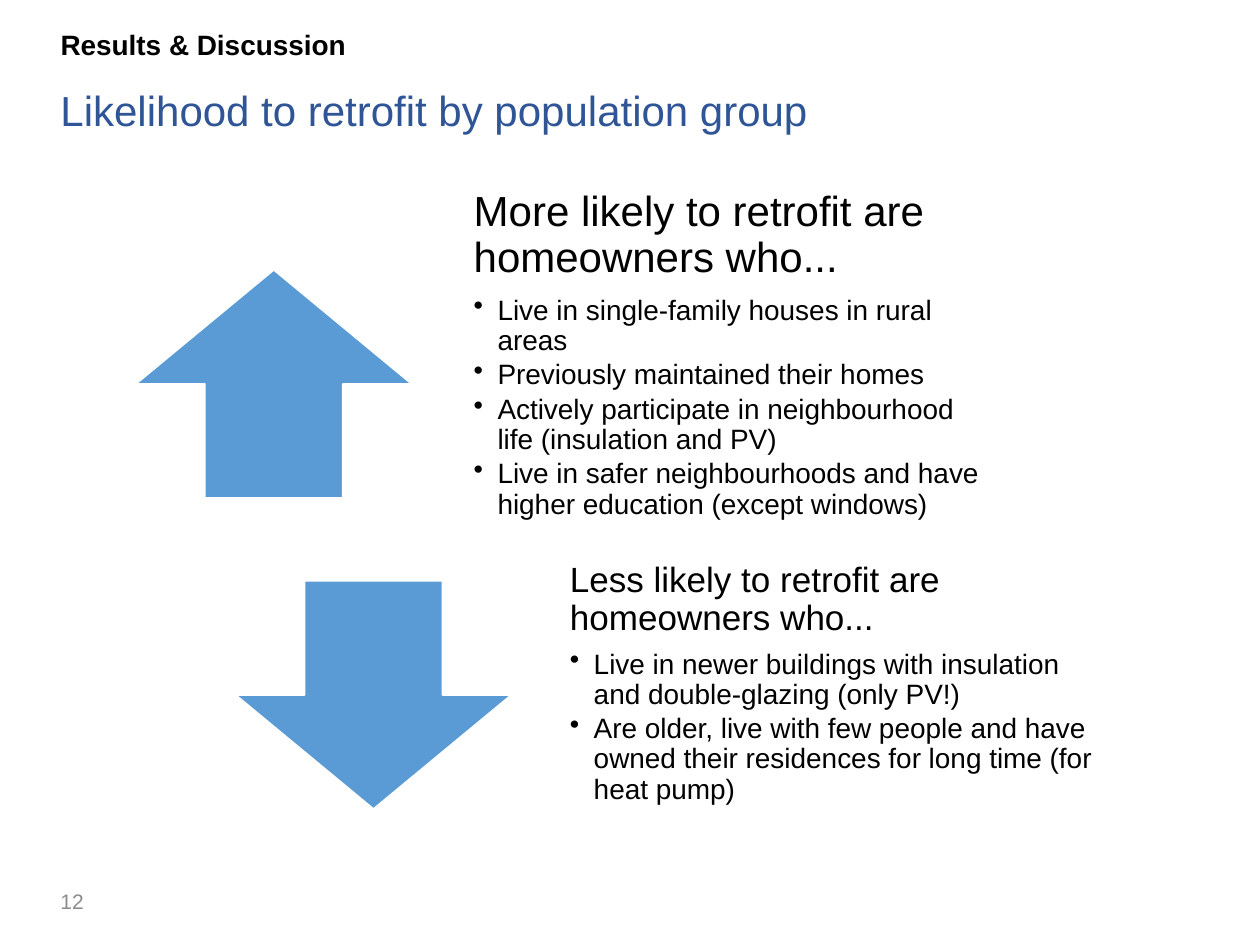
"""Build a slide on which homeowners are more or less likely to retrofit."""
from lxml import etree
from pptx import Presentation, util as u
from pptx.dml.color import RGBColor
from pptx.enum import shapes, text
from pptx.oxml.ns import qn

BLACK = RGBColor(0, 0, 0)
WHITE = RGBColor(255, 255, 255)
NAVY = RGBColor(0x2F, 0x55, 0x97)
BLUE = RGBColor(0x5B, 0x9B, 0xD5)
GRAY = RGBColor(0x8C, 0x8C, 0x8C)

TITLE = "Results & Discussion"
TOPIC = "Likelihood to retrofit by population group"
PAGE = "12"
GROUPS = [
    dict(arrow=shapes.MSO_SHAPE.UP_ARROW, left=2.74, top=5.44,
         size=24, pad=0.48, base=1.14, rise=0.59,
         head="More likely to retrofit are homeowners who...",
         items=["Live in single-family houses in rural areas",
                "Previously maintained their homes",
                "Actively participate in neighbourhood life (insulation and PV)",
                "Live in safer neighbourhoods and have higher education (except windows)"]),
    dict(arrow=shapes.MSO_SHAPE.DOWN_ARROW, left=4.75, top=11.71,
         size=20, pad=0.41, base=0.41, rise=0.61,
         head="Less likely to retrofit are homeowners who...",
         items=["Live in newer buildings with insulation and double-glazing (only PV!)",
                "Are older, live with few people and have owned their residences "
                "for long time (for heat pump)"]),
]
ARROW = (5.56, 4.6)
LIST = (11.38, 5.77)
SHIFT = 6.33
HANG = 0.48


def place(box, left, top, width, height):
    box.left, box.top = u.Cm(left), u.Cm(top)
    box.width, box.height = u.Cm(width), u.Cm(height)


def write(par, words, size=16, color=BLACK, bold=False, line=1, after=0, bullet=False):
    props = par._p.get_or_add_pPr()
    if bullet:
        props.set("marL", str(u.Cm(HANG)))
        props.set("indent", str(-u.Cm(HANG)))
        etree.SubElement(props, qn("a:buChar")).set("char", "•")
    par.alignment = text.PP_ALIGN.LEFT
    par.line_spacing = line
    par.space_after = u.Pt(after)
    run = par.add_run()
    run.text = words
    run.font.name = "Arial"
    run.font.size = u.Pt(size)
    run.font.bold = bold
    run.font.color.rgb = color


def frame(box, anchor, pad=0.25, top=0.13, base=0.13):
    body = box.text_frame
    body.word_wrap = True
    body.auto_size = text.MSO_AUTO_SIZE.NONE
    body.vertical_anchor = anchor
    body.margin_left = body.margin_right = u.Cm(pad)
    body.margin_top, body.margin_bottom = u.Cm(top), u.Cm(base)
    return body


def label(slide, spot, words, anchor=text.MSO_ANCHOR.TOP, **style):
    box = slide.shapes.add_textbox(0, 0, 0, 0)
    place(box, *spot)
    write(frame(box, anchor).paragraphs[0], words, **style)


def group(slide, part):
    left, top = part["left"], part["top"]
    arrow = slide.shapes.add_shape(part["arrow"], 0, 0, 0, 0)
    place(arrow, left, top, *ARROW)
    arrow.shadow.inherit = False
    arrow.fill.solid()
    arrow.fill.fore_color.rgb = BLUE
    arrow.line.color.rgb = WHITE
    arrow.line.width = u.Pt(1)

    box = slide.shapes.add_textbox(0, 0, 0, 0)
    place(box, left + SHIFT, top - part["rise"], *LIST)
    body = frame(box, text.MSO_ANCHOR.MIDDLE, part["pad"], 0, part["base"])
    size = part["size"]
    write(body.paragraphs[0], part["head"], size=size, line=0.9, after=0.35 * size)
    for item in part["items"]:
        write(body.add_paragraph(), item, line=0.9, after=2.4, bullet=True)


def main():
    deck = Presentation()
    deck.slide_width, deck.slide_height = u.Cm(25.4), u.Cm(19.05)
    slide = deck.slides.add_slide(deck.slide_layouts[5])
    title = slide.shapes.title
    place(title, 0.97, 0.43, 23.47, 0.64)
    write(frame(title, text.MSO_ANCHOR.TOP).paragraphs[0], TITLE, bold=True)
    label(slide, (0.97, 1.57, 23.47, 1.88), TOPIC, size=24, color=NAVY)
    label(slide, (0.97, 17.65, 5.72, 1.02), PAGE, text.MSO_ANCHOR.MIDDLE,
          size=12, color=GRAY)
    for part in GROUPS:
        group(slide, part)
    deck.save("out.pptx")


if __name__ == "__main__":
    main()
